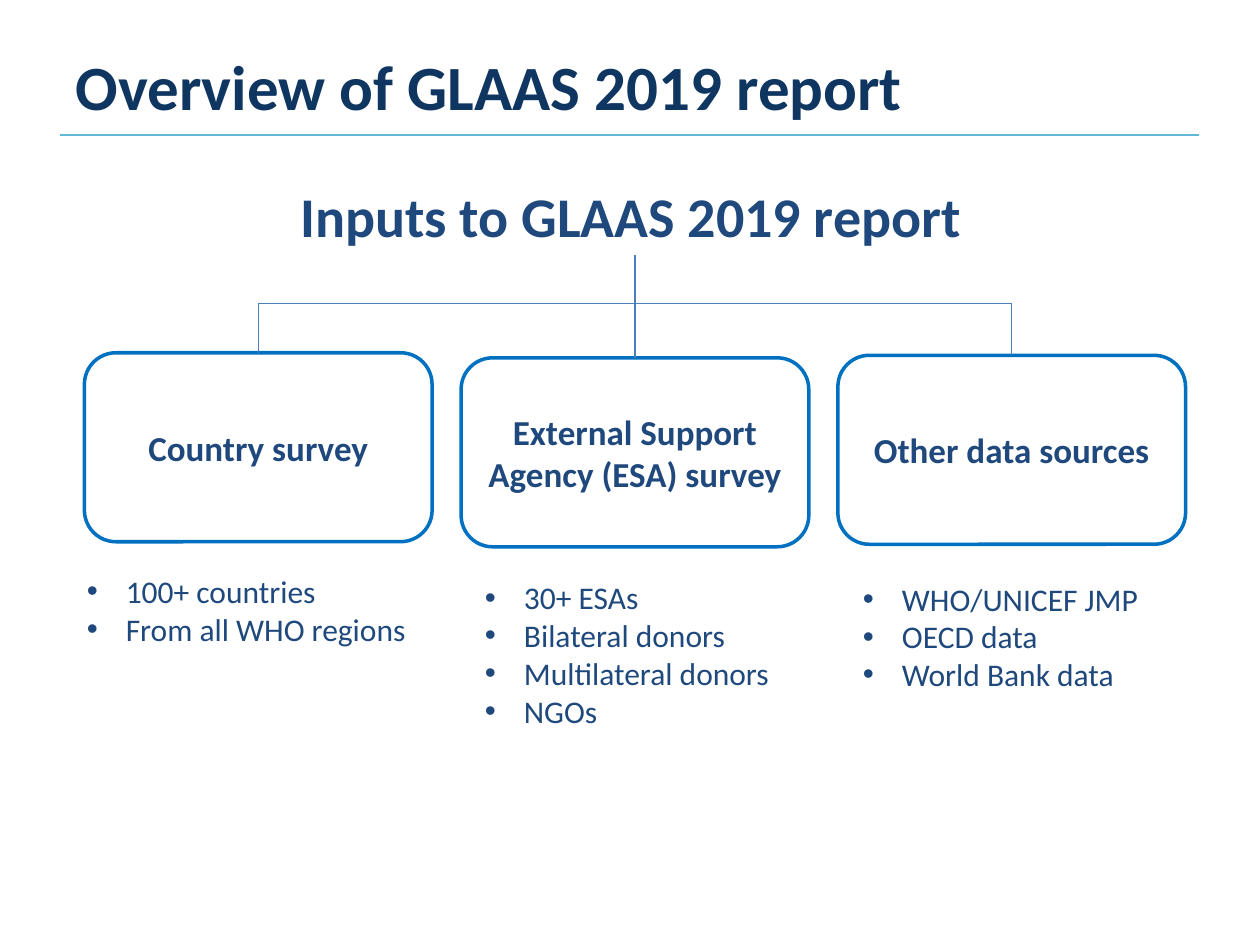
from dataclasses import dataclass

from lxml import etree
from pptx import Presentation
from pptx.dml.color import RGBColor
from pptx.enum.shapes import MSO_CONNECTOR, MSO_SHAPE
from pptx.enum.text import MSO_ANCHOR, MSO_AUTO_SIZE, PP_ALIGN
from pptx.oxml.ns import qn
from pptx.util import Inches, Pt

STRAIGHT, ELBOW = MSO_CONNECTOR.STRAIGHT, MSO_CONNECTOR.ELBOW
ROUND = MSO_SHAPE.ROUNDED_RECTANGLE
MIDDLE, BOTTOM = MSO_ANCHOR.MIDDLE, MSO_ANCHOR.BOTTOM
LEFT, CENTER = PP_ALIGN.LEFT, PP_ALIGN.CENTER
GROW, FIXED = MSO_AUTO_SIZE.SHAPE_TO_FIT_TEXT, MSO_AUTO_SIZE.NONE

WIDTH, HEIGHT = 10, 7.5
NAVY, BLUE, EDGE = "0F3661", "1F497D", "0070C0"
BRANCH, RULE = "4B7EBC", "60B8D8"
BOX_W, BOX_H = 2.76, 1.5
COL_X, COL_STEP = 0.67, 2.99
FORK_Y, HEAD_Y = 2.41, 2.02


@dataclass
class Source:
    name: str
    top: float
    items: list[str]
    list_at: tuple[float, float, float, float]


SOURCES = [
    Source("Country survey", 2.8,
           ["100+ countries", "From all WHO regions"],
           (0.59, 4.49, 2.99, 0.71)),
    Source("External Support Agency (ESA) survey", 2.84,
           ["30+ ESAs", "Bilateral donors", "Multilateral donors", "NGOs"],
           (3.75, 4.54, 2.75, 1.62)),
    Source("Other data sources", 2.82,
           ["WHO/UNICEF JMP", "OECD data", "World Bank data"],
           (6.75, 4.55, 2.75, 1.01)),
]


def color(value: str) -> RGBColor:
    return RGBColor.from_string(value)


def style(para, size: float, tint: str, bold: bool, align=LEFT) -> None:
    para.alignment = align
    for run in para.runs:
        font = run.font
        font.name, font.size, font.bold = "Calibri", Pt(size), bold
        font.color.rgb = color(tint)


def fill_text(shape, text: str, size: float, tint: str, anchor, align) -> None:
    frame = shape.text_frame
    frame.text = text
    frame.word_wrap, frame.auto_size = True, FIXED
    frame.vertical_anchor = anchor
    style(frame.paragraphs[0], size, tint, True, align)


def add_box(slide, source: Source, left: float):
    box = slide.shapes.add_shape(ROUND, *map(Inches, (left, source.top, BOX_W, BOX_H)))
    box.shadow.inherit = False
    box.fill.solid()
    box.fill.fore_color.rgb = color("FFFFFF")
    box.line.color.rgb = color(EDGE)
    box.line.width = Pt(2)
    fill_text(box, source.name, 20, BLUE, MIDDLE, CENTER)
    return box


def add_list(slide, source: Source) -> None:
    frame = slide.shapes.add_textbox(*map(Inches, source.list_at)).text_frame
    frame.word_wrap, frame.auto_size = True, GROW
    frame.text = "\n".join(source.items)
    for para in frame.paragraphs:
        props = para._p.get_or_add_pPr()
        props.set("marL", str(Inches(0.31)))
        props.set("indent", str(-Inches(0.31)))
        etree.SubElement(props, qn("a:buFont")).set("typeface", "Arial")
        etree.SubElement(props, qn("a:buChar")).set("char", "•")
        style(para, 18, BLUE, False)


def add_line(slide, start, end, tint: str, width: float, kind=STRAIGHT):
    line = slide.shapes.add_connector(kind, *map(Inches, (*start, *end)))
    line.line.color.rgb = color(tint)
    line.line.width = Pt(width)
    etree.SubElement(line._element.spPr, qn("a:effectLst"))
    return line


def add_bend(slide, start, end, preset: str) -> None:
    """Draw an elbow that leaves its start upwards: laid out flat, then turned by 270°."""
    mid_x, mid_y = (start[0] + end[0]) / 2, (start[1] + end[1]) / 2
    flat = [(mid_x + mid_y - y, mid_y + x - mid_x) for x, y in (start, end)]
    props = add_line(slide, *flat, BRANCH, 0.75, ELBOW)._element.spPr
    props.find(qn("a:xfrm")).set("rot", str(270 * 60000))
    props.find(qn("a:prstGeom")).set("prst", preset)


def main() -> None:
    deck = Presentation()
    deck.slide_width, deck.slide_height = Inches(WIDTH), Inches(HEIGHT)
    slide = deck.slides.add_slide(deck.slide_layouts[5])

    title = slide.shapes.title
    title.left, title.top, title.width, title.height = map(Inches, (0.5, 0.13, 9, 1.09))
    fill_text(title, "Overview of GLAAS 2019 report", 36, NAVY, MIDDLE, LEFT)
    add_line(slide, (0.48, 1.07), (WIDTH - 0.48, 1.07), RULE, 1)

    head = slide.shapes.add_textbox(*map(Inches, (0.51, 1.23, 9, HEAD_Y - 1.23)))
    fill_text(head, "Inputs to GLAAS 2019 report", 32, BLUE, BOTTOM, CENTER)

    boxes, tops = [], []
    for col, source in enumerate(SOURCES):
        left = COL_X + col * COL_STEP
        boxes.append(add_box(slide, source, left))
        tops.append((left + BOX_W / 2, source.top))
        add_list(slide, source)

    first, middle, last = tops
    trunk = middle[0]
    add_bend(slide, first, (trunk, HEAD_Y), "bentConnector3")
    add_bend(slide, last, (trunk, FORK_Y), "bentConnector2")
    stem = add_line(slide, middle, (trunk, FORK_Y), BRANCH, 0.75)
    stem.begin_connect(boxes[1], 0)

    deck.save("out.pptx")


if __name__ == "__main__":
    main()
